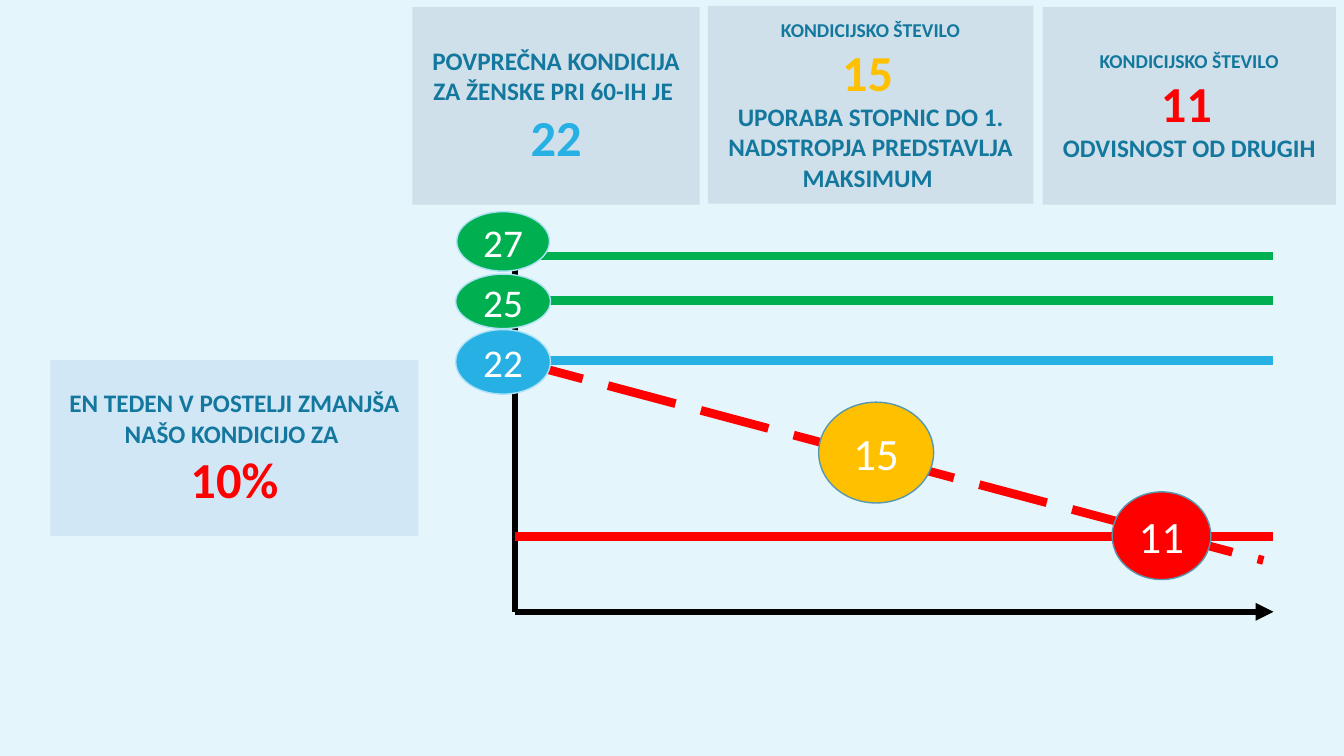
from dataclasses import dataclass

from lxml import etree
from pptx import Presentation
from pptx.dml.color import RGBColor
from pptx.enum.dml import MSO_LINE
from pptx.enum.shapes import MSO_CONNECTOR, MSO_SHAPE
from pptx.enum.text import MSO_ANCHOR, PP_ALIGN
from pptx.oxml.ns import qn
from pptx.slide import Slide
from pptx.util import Inches, Length, Pt

RECTANGLE = MSO_SHAPE.RECTANGLE
DISC = MSO_SHAPE.FLOWCHART_CONNECTOR
STRAIGHT = MSO_CONNECTOR.STRAIGHT
LONG_DASH = MSO_LINE.LONG_DASH
MIDDLE = MSO_ANCHOR.MIDDLE
CENTER = PP_ALIGN.CENTER

COLUMNS, ROWS = 133.3, 75
SLIDE_WIDTH, SLIDE_HEIGHT = Inches(13.33), Inches(7.5)
FONT = "Calibri"
COLORS = {
    "background": "E4F5FC", "card": "CFE0EA", "note": "D1E7F6",
    "text": "14789E", "axis": "000000", "white": "FFFFFF",
    "green": "00B050", "blue": "27B0E4", "red": "FF0000", "yellow": "FFC000",
    "pale_edge": "ADE1F5", "dark_edge": "5798B0",
}
AXIS_LEFT, AXIS_RIGHT, AXIS_BOTTOM, AXIS_TOP = 51.1, 126.3, 60.7, 21.4
AVERAGE_ROW = 35.8


@dataclass(frozen=True)
class Run:
    text: str
    size: float = 18
    color: str = "text"
    bold: bool = True


@dataclass(frozen=True)
class Box:
    left: float
    top: float
    width: float
    height: float
    fill: str
    paragraphs: list[list[Run]]
    edge: str = ""


@dataclass(frozen=True)
class Stroke:
    start: tuple[float, float]
    end: tuple[float, float]
    color: str
    weight: float = 6.25
    arrow: bool = False
    dashed: bool = False


def level(row: float, color: str) -> Stroke:
    """Return a horizontal fitness level across the chart."""
    return Stroke((AXIS_LEFT, row), (AXIS_RIGHT, row), color)


def score(left: float, top: float, width: float, height: float, fill: str,
          value: str, size: float, edge: str) -> Box:
    """Return a disc that carries a fitness number."""
    return Box(left, top, width, height, fill, [[Run(value, size, "white", False)]], edge)


def fitness_card(left: float, top: float, width: float, value: str, color: str,
                 meaning: str) -> Box:
    """Return a card that explains one fitness number."""
    return Box(left, top, width, 19.6, "card", [
        [Run("KONDICIJSKO ŠTEVILO", 14)],
        [Run(value, 36, color), Run(" ")],
        [Run(meaning)],
    ])


CARDS = [
    Box(40.9, 0.7, 28.5, 19.6, "card", [
        [Run("POVPREČNA KONDICIJA ZA ŽENSKE PRI 60-IH JE ")],
        [Run("22", 36, "blue")],
    ]),
    fitness_card(103.4, 0.7, 29.1, "11", "red", "ODVISNOST OD DRUGIH"),
    fitness_card(70.2, 0.6, 32.3, "15", "yellow",
                 "UPORABA STOPNIC DO 1. NADSTROPJA PREDSTAVLJA MAKSIMUM "),
    Box(5, 35.7, 36.5, 17.5, "note", [
        [Run("EN TEDEN V POSTELJI ZMANJŠA NAŠO KONDICIJO ZA ")],
        [Run("10%", 36, "red")],
    ]),
]
STROKES = [
    Stroke((AXIS_LEFT, AXIS_BOTTOM), (AXIS_RIGHT, AXIS_BOTTOM), "axis", 4.25, arrow=True),
    Stroke((AXIS_LEFT, AXIS_BOTTOM), (AXIS_LEFT, AXIS_TOP), "axis", 4.25, arrow=True),
    level(53.2, "red"),
    level(AVERAGE_ROW, "blue"),
    level(29.8, "green"),
    level(25.4, "green"),
    Stroke((AXIS_LEFT, AVERAGE_ROW), (125.3, 55.6), "red", dashed=True),
]
SCORES = [
    score(45.2, 27.2, 9.4, 5.4, "green", "25", 28, "pale_edge"),
    score(45.3, 21, 9.2, 5.9, "green", "27", 28, "pale_edge"),
    score(110.3, 48.8, 9.8, 8.7, "red", "11", 32, "dark_edge"),
    score(81.2, 39.9, 11.4, 10, "yellow", "15", 32, "dark_edge"),
    score(45.2, 32.7, 9.4, 6.4, "blue", "22", 28, "pale_edge"),
]


def across(columns: float) -> Length:
    """Convert grid columns to a length."""
    return Length(round(SLIDE_WIDTH * columns / COLUMNS))


def down(rows: float) -> Length:
    """Convert grid rows to a length."""
    return Length(round(SLIDE_HEIGHT * rows / ROWS))


def rgb(name: str) -> RGBColor:
    """Look up a colour by name."""
    return RGBColor.from_string(COLORS[name])


def draw_box(slide: Slide, box: Box, outline: MSO_SHAPE) -> None:
    """Draw a filled shape with centred text."""
    shape = slide.shapes.add_shape(outline, across(box.left), down(box.top),
                                   across(box.width), down(box.height))
    shape.shadow.inherit = False
    shape.fill.solid()
    shape.fill.fore_color.rgb = rgb(box.fill)
    if box.edge:
        shape.line.color.rgb = rgb(box.edge)
        shape.line.width = Pt(1)
    else:
        shape.line.fill.background()
    frame = shape.text_frame
    frame.word_wrap = True
    frame.vertical_anchor = MIDDLE
    for index, runs in enumerate(box.paragraphs):
        paragraph = frame.add_paragraph() if index else frame.paragraphs[0]
        paragraph.alignment = CENTER
        for part in runs:
            run = paragraph.add_run()
            run.text = part.text
            run.font.name = FONT
            run.font.size = Pt(part.size)
            run.font.bold = part.bold
            run.font.color.rgb = rgb(part.color)


def draw_stroke(slide: Slide, stroke: Stroke) -> None:
    """Draw a straight line, with a dash or an arrowhead if asked."""
    (left, top), (right, bottom) = stroke.start, stroke.end
    connector = slide.shapes.add_connector(STRAIGHT, across(left), down(top),
                                           across(right), down(bottom))
    line = connector.line
    line.color.rgb = rgb(stroke.color)
    line.width = Pt(stroke.weight)
    if stroke.dashed:
        line.dash_style = LONG_DASH
    properties = connector.element.spPr
    if stroke.arrow:
        etree.SubElement(properties.find(qn("a:ln")), qn("a:tailEnd"), type="triangle")
    etree.SubElement(properties, qn("a:effectLst"))


def main() -> None:
    """Build and save the slide."""
    presentation = Presentation()
    presentation.slide_width, presentation.slide_height = SLIDE_WIDTH, SLIDE_HEIGHT
    slide = presentation.slides.add_slide(presentation.slide_layouts[6])
    background = slide.background.fill
    background.solid()
    background.fore_color.rgb = rgb("background")
    for card in CARDS:
        draw_box(slide, card, RECTANGLE)
    for stroke in STROKES:
        draw_stroke(slide, stroke)
    for disc in SCORES:
        draw_box(slide, disc, DISC)
    presentation.save("out.pptx")


if __name__ == "__main__":
    main()
